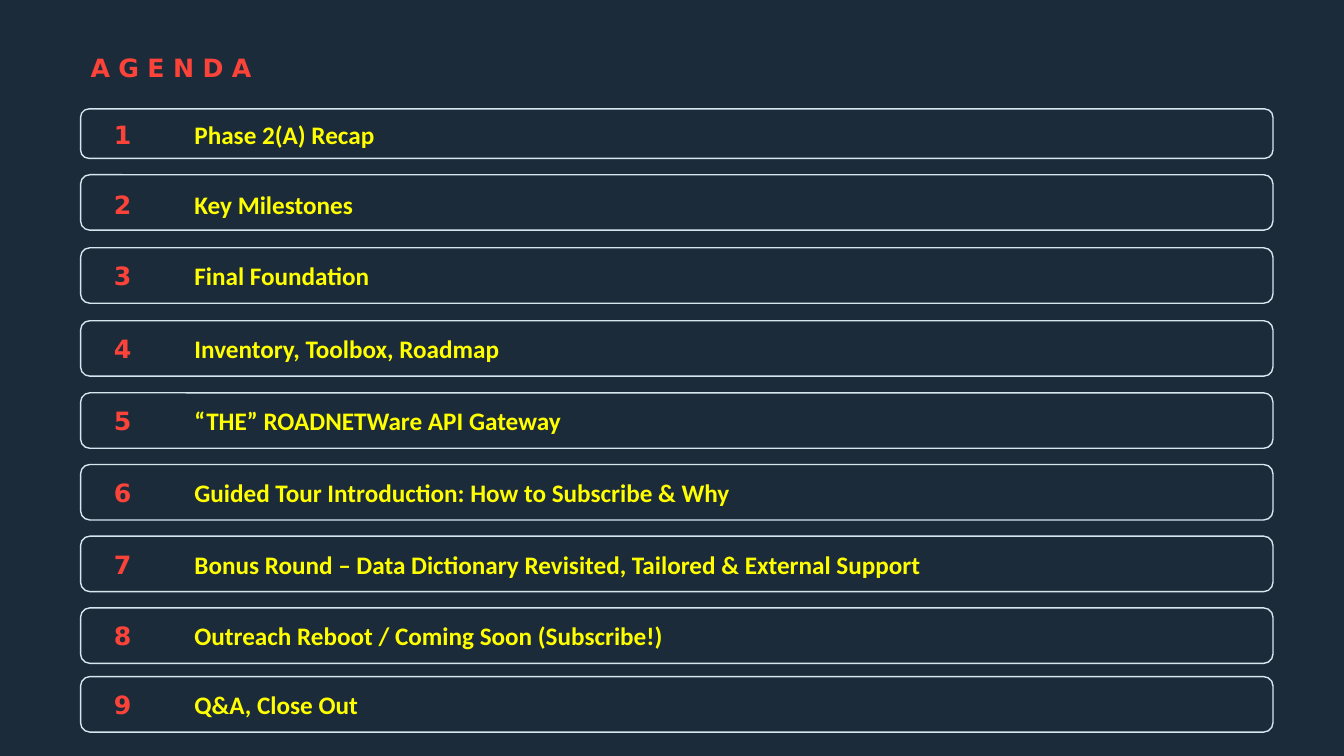
"""Build the agenda slide with nine numbered, outlined rows."""
from dataclasses import dataclass

import pptx
import pptx.dml.color
import pptx.enum.shapes
import pptx.enum.text
import pptx.util

Pt = pptx.util.Pt


@dataclass(frozen=True)
class Theme:
    background: str = "1C2B39"
    accent: str = "FB433A"
    topic: str = "FFFF00"
    outline: str = "D8E6F0"
    accent_font: str = "DejaVu Sans"
    topic_font: str = "Calibri"
    text_size: float = 18
    outline_width: float = 1
    letter_spacing: float = 6


THEME = Theme()
ROW_LEFT, ROW_WIDTH, ROW_HEIGHT = 57.6, 851.7, 39.6
FIRST_ROW_HEIGHT = 35.3
NUMBER_LEFT, NUMBER_WIDTH = 74.2, 43.9
TOPIC_LEFT, TOPIC_WIDTH = 131.8, 737.3
LABEL_HEIGHT = 28.8

AGENDA = [
    (77.8, 81.4, "Phase 2(A) Recap"),
    (124.8, 131.8, "Key Milestones"),
    (177, 182.4, "Final Foundation"),
    (229.1, 234.5, "Inventory, Toolbox, Roadmap"),
    (280.6, 286, "“THE” ROADNETWare API Gateway"),
    (331.8, 337.2, "Guided Tour Introduction: How to Subscribe & Why"),
    (383, 388.6, "Bonus Round – Data Dictionary Revisited, Tailored & External Support"),
    (434.2, 439.8, "Outreach Reboot / Coming Soon (Subscribe!)"),
    (483.3, 488.8, "Q&A, Close Out"),
]


def rgb(value):
    """Return the colour for a hex value."""
    return pptx.dml.color.RGBColor.from_string(value)


def add_label(slide, text, left, top, width, height, font_name, colour):
    """Add one bold line of text and return its paragraph."""
    label = slide.shapes.add_textbox(Pt(left), Pt(top), Pt(width), Pt(height))
    frame = label.text_frame
    frame.word_wrap = True
    frame.vertical_anchor = pptx.enum.text.MSO_ANCHOR.MIDDLE
    frame.text = text
    paragraph = frame.paragraphs[0]
    font = paragraph.runs[0].font
    font.name = font_name
    font.size = Pt(THEME.text_size)
    font.bold = True
    font.color.rgb = rgb(colour)
    return paragraph


def add_title(slide, text):
    """Add the letter-spaced heading."""
    heading = add_label(slide, text, ROW_LEFT, 33.1, 705.6, 33.1,
                        THEME.accent_font, THEME.accent)
    heading.line_spacing = 0.9
    properties = heading.runs[0].font._element
    properties.set("spc", str(int(THEME.letter_spacing * 100)))


def add_row_outline(slide, top, height):
    """Add the rounded outline of an agenda row."""
    outline = slide.shapes.add_shape(
        pptx.enum.shapes.MSO_SHAPE.ROUNDED_RECTANGLE,
        Pt(ROW_LEFT), Pt(top), Pt(ROW_WIDTH), Pt(height))
    outline.shadow.inherit = False
    outline.fill.background()
    outline.line.color.rgb = rgb(THEME.outline)
    outline.line.width = Pt(THEME.outline_width)


def add_agenda_row(slide, number, top, label_top, topic):
    """Add an outlined row with its number and topic."""
    add_row_outline(slide, top, FIRST_ROW_HEIGHT if number == 1 else ROW_HEIGHT)
    add_label(slide, str(number), NUMBER_LEFT, label_top, NUMBER_WIDTH,
              LABEL_HEIGHT, THEME.accent_font, THEME.accent)
    add_label(slide, topic, TOPIC_LEFT, label_top, TOPIC_WIDTH,
              LABEL_HEIGHT, THEME.topic_font, THEME.topic)


def main():
    """Create and save the agenda slide."""
    presentation = pptx.Presentation()
    presentation.slide_width = Pt(960)
    presentation.slide_height = Pt(540)
    slide = presentation.slides.add_slide(presentation.slide_layouts[6])
    slide.background.fill.solid()
    slide.background.fill.fore_color.rgb = rgb(THEME.background)
    add_title(slide, "AGENDA")
    for number, (top, label_top, topic) in enumerate(AGENDA, start=1):
        add_agenda_row(slide, number, top, label_top, topic)
    presentation.save("out.pptx")


if __name__ == "__main__":
    main()
